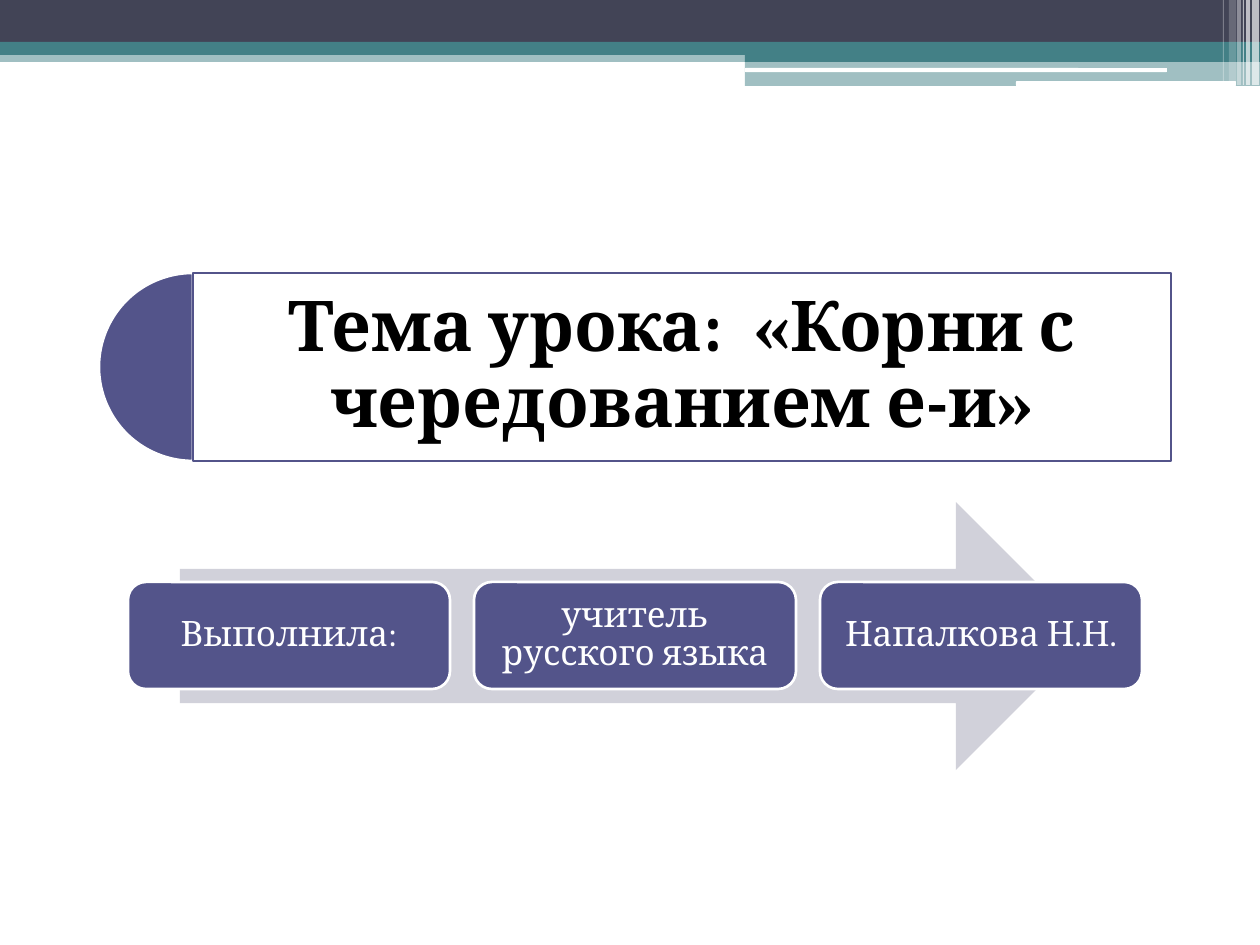
from lxml.etree import SubElement
from pptx import Presentation
from pptx.dml.color import RGBColor
from pptx.enum.shapes import MSO_SHAPE as Shape
from pptx.enum.text import MSO_ANCHOR as Anchor, MSO_AUTO_SIZE as AutoSize, PP_ALIGN as Align
from pptx.oxml.ns import qn
from pptx.util import Emu, Pt

EMU_PER_PX = 914400 / 126
COLORS = {
    "slate": "424456",
    "teal": "438086",
    "violet": "53548A",
    "lavender": "D1D1DA",
    "white": "FFFFFF",
    "black": "000000",
}


def px(length):
    return Emu(round(length * EMU_PER_PX))


class SlideBuilder:
    """Holds the style and the current slide."""

    font = "Cambria"
    line_width = Pt(1.5)

    def __init__(self, slide):
        self.slide = slide

    def color(self, name):
        return RGBColor.from_string(COLORS[name])

    def place(self, shape, box):
        shape.left, shape.top, shape.width, shape.height = map(px, box)

    def shape(self, kind, box, fill, opacity=100, line=None, adjustments=()):
        shape = self.slide.shapes.add_shape(kind, *map(px, box))
        shape.shadow.inherit = False
        shape.fill.solid()
        shape.fill.fore_color.rgb = self.color(fill)
        if opacity < 100:
            fill_color = shape._element.spPr.find(qn("a:solidFill"))[0]
            SubElement(fill_color, qn("a:alpha"), val=str(opacity * 1000))
        if line:
            shape.line.color.rgb = self.color(line)
            shape.line.width = self.line_width
        else:
            shape.line.fill.background()
        for index, value in enumerate(adjustments):
            shape.adjustments[index] = value
        return shape

    def text(self, shape, text, size, color, inset, bold=False):
        frame = shape.text_frame
        frame.word_wrap = True
        frame.auto_size = AutoSize.NONE
        frame.vertical_anchor = Anchor.MIDDLE
        frame.margin_left = frame.margin_right = px(inset)
        frame.margin_top = frame.margin_bottom = px(inset)
        paragraph = frame.paragraphs[0]
        paragraph.alignment = Align.CENTER
        paragraph.line_spacing = 0.9
        paragraph.space_before = Pt(0)
        run = paragraph.add_run()
        run.text = text
        run.font.name = self.font
        run.font.size = Pt(size)
        run.font.bold = bold
        run.font.color.rgb = self.color(color)

    def title(self, text, box):
        title = self.slide.shapes.title
        self.place(title, box)
        self.text(title, text, 40, "black", 21, bold=True)
        # Bring the title in front of its frame
        self.slide.shapes._spTree.append(title._element)

    def card(self, text, box):
        card = self.shape(Shape.ROUNDED_RECTANGLE, box, "violet", line="white")
        self.text(card, text, 20, "white", 15)


def add_header(builder):
    bands = [
        ((0, 50, 1260, 12), "teal", 50),
        ((0, 0, 1260, 43), "slate", 100),
        ((0, 42, 1260, 13), "teal", 100),
        ((745, 49, 515, 13), "teal", 100),
        ((745, 61, 515, 25), "teal", 50),
    ]
    for box, fill, opacity in bands:
        builder.shape(Shape.RECTANGLE, box, fill, opacity)

    for box in [(745, 68, 422, 4), (1016, 81, 220, 5)]:
        builder.shape(Shape.ROUNDED_RECTANGLE, box, "white", adjustments=[0.17])

    stripes = [  # left, width, height, opacity
        (1252, 7, 85, 65),
        (1246, 4, 85, 65),
        (1243, 1, 85, 60),
        (1237, 4, 85, 40),
        (1229, 7, 81, 20),
        (1223, 1, 81, 30),
    ]
    for left, width, height, opacity in stripes:
        builder.shape(Shape.RECTANGLE, (left, 0, width, height), "white", opacity)


def add_topic(builder):
    frame = (193, 273, 978, 188)
    builder.shape(Shape.PIE, (99, 273, 188, 188), "violet", line="white",
                  adjustments=[54, 162])
    builder.shape(Shape.RECTANGLE, frame, "white", 90, line="violet")
    builder.title("Тема урока:  «Корни с чередованием е-и»", frame)


def add_author(builder):
    builder.shape(Shape.RIGHT_ARROW, (180, 502, 910, 268), "lavender")
    for index, text in enumerate(["Выполнила:", "учитель русского языка", "Напалкова Н.Н."]):
        builder.card(text, (128 + 346 * index, 582, 322, 107))


def main():
    presentation = Presentation()
    presentation.slide_width, presentation.slide_height = px(1260), px(945)
    title_only = presentation.slide_layouts[5]
    builder = SlideBuilder(presentation.slides.add_slide(title_only))
    add_header(builder)
    add_topic(builder)
    add_author(builder)
    presentation.save("out.pptx")


if __name__ == "__main__":
    main()
